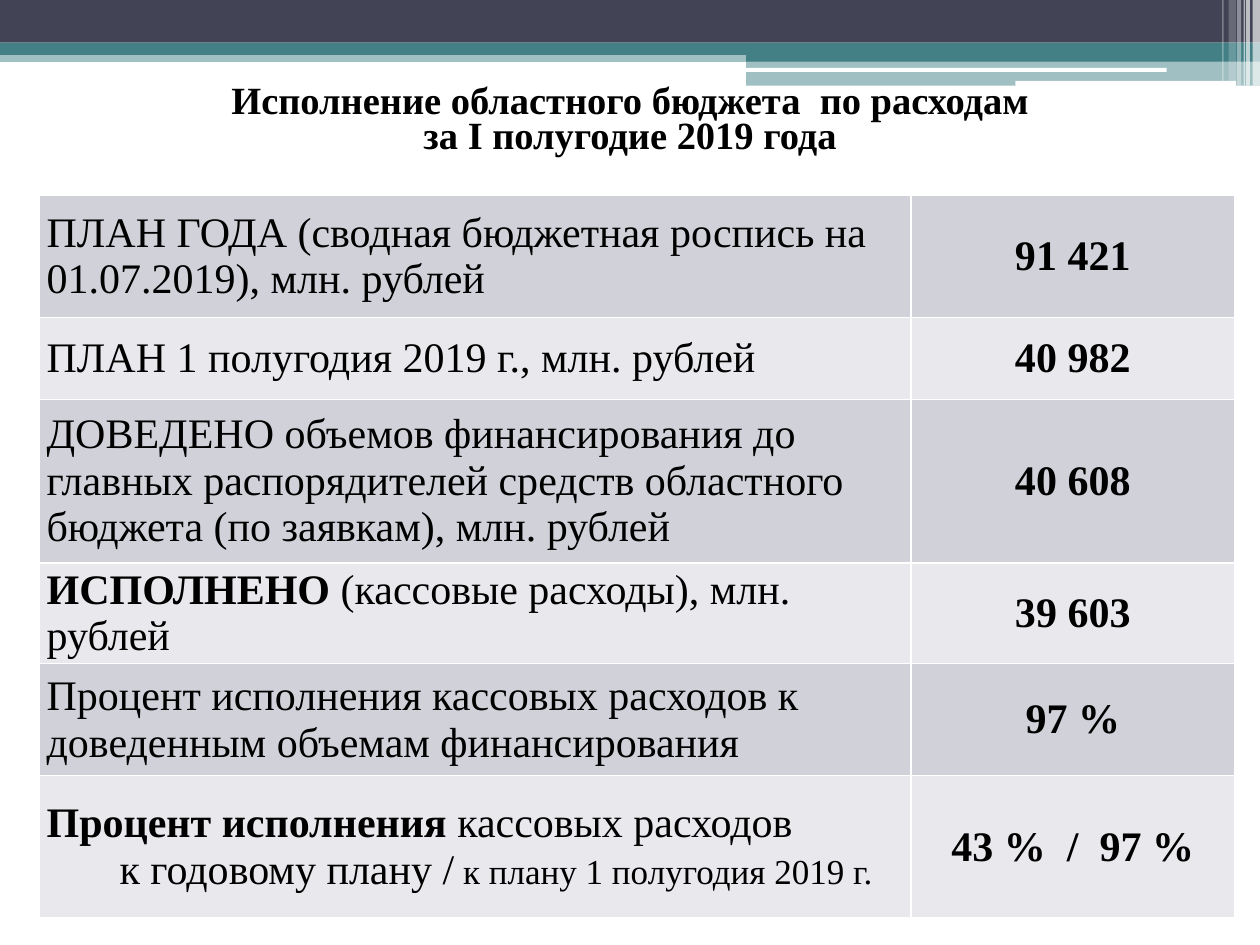
from lxml.etree import SubElement
from pptx import Presentation
from pptx.dml.color import RGBColor
from pptx.enum.shapes import MSO_SHAPE
from pptx.enum.text import MSO_ANCHOR, PP_ALIGN
from pptx.oxml.ns import qn
from pptx.util import Cm, Pt

COLORS = {"dark": "424456", "teal": "438086", "white": "FFFFFF",
          "black": "000000", "odd": "D1D1DA", "even": "E9E9ED"}
FONT = "Times New Roman"


def color(name):
    return RGBColor.from_string(COLORS[name])


def style(font, size, bold):
    font.name, font.size, font.bold = FONT, Pt(size), bold
    font.color.rgb = color("black")


prs = Presentation()
prs.slide_width, prs.slide_height = Cm(25.4), Cm(19.05)
slide = prs.slides.add_slide(prs.slide_layouts[5])
shapes = slide.shapes

# Header bands: left, top, width, height, color, opacity in percent, rounded
bands = [
    (0, 1.02, 25.4, 0.23, "teal", 50, False),
    (0, 0, 25.4, 0.86, "dark", 100, False),
    (0, 0.86, 25.4, 0.25, "teal", 100, False),
    (15.04, 0.99, 10.36, 0.25, "teal", 100, False),
    (15.04, 1.22, 10.36, 0.51, "teal", 50, False),
    (15.01, 1.37, 8.51, 0.08, "white", 100, True),
    (20.47, 1.63, 4.45, 0.1, "white", 100, True),
]
# Thin stripes at the right edge: left, width, height, opacity
stripes = [(25.25, 0.15, 1.73, 65), (25.12, 0.08, 1.73, 65),
           (25.07, 0.03, 1.73, 60), (24.94, 0.08, 1.73, 40),
           (24.77, 0.15, 1.63, 20), (24.64, 0.03, 1.63, 30)]
bands += [(left, 0, width, height, "white", alpha, False)
          for left, width, height, alpha in stripes]

for left, top, width, height, name, alpha, rounded in bands:
    kind = MSO_SHAPE.ROUNDED_RECTANGLE if rounded else MSO_SHAPE.RECTANGLE
    band = shapes.add_shape(kind, Cm(left), Cm(top), Cm(width), Cm(height))
    band.shadow.inherit = False
    band.line.fill.background()
    band.fill.solid()
    band.fill.fore_color.rgb = color(name)
    if alpha < 100:
        fill = band.fill._xPr.find(qn("a:solidFill"))
        SubElement(fill[0], qn("a:alpha"), val=str(alpha * 1000))

# Title, in front of the bands
title = shapes.title
shapes._spTree.append(title._element)
title.left, title.top = Cm(0), Cm(1.52)
title.width, title.height = Cm(25.4), Cm(1.73)
frame = title.text_frame
frame.word_wrap = True
frame.vertical_anchor = MSO_ANCHOR.BOTTOM
frame.margin_left = frame.margin_right = Cm(0.15)
frame.margin_top, frame.margin_bottom = Cm(0), Cm(0.1)
frame.text = "Исполнение областного бюджета  по расходам\nза I полугодие 2019 года"
for par in frame.paragraphs:
    par.alignment = PP_ALIGN.CENTER
    par.line_spacing = 0.75
    par.space_before = Pt(0)
    style(par.font, 22, True)

# Budget table: row height, label runs (text, size, bold), value
rows = [
    (2.46, [("ПЛАН ГОДА (сводная бюджетная роспись на 01.07.2019), млн. рублей",
             24, False)], "91 421"),
    (1.65, [("ПЛАН 1 полугодия 2019 г., млн. рублей", 24, False)], "40 982"),
    (3.3, [("ДОВЕДЕНО объемов финансирования до главных распорядителей "
            "средств областного бюджета (по заявкам), млн. рублей",
            24, False)], "40 608"),
    (2.03, [("ИСПОЛНЕНО ", 24, True),
            ("(кассовые расходы), млн. рублей", 24, False)], "39 603"),
    (2.26, [("Процент исполнения кассовых расходов к доведенным объемам "
             "финансирования", 24, False)], "97 %"),
    (2.87, [("Процент исполнения ", 24, True),
            ("кассовых расходов\vк годовому плану /", 24, False),
            (" к плану 1 полугодия 2019 г.", 20, False)], "43 %  /  97 %"),
]
total = sum(row[0] for row in rows)
table = shapes.add_table(len(rows), 2, Cm(0.79), Cm(3.94),
                         Cm(24.1), Cm(total)).table
table.first_row = table.horz_banding = False
table.columns[0].width, table.columns[1].width = Cm(17.57), Cm(6.53)

for i, (height, label, value) in enumerate(rows):
    table.rows[i].height = Cm(height)
    for j, runs in enumerate([label, [(value, 24, True)]]):
        cell = table.cell(i, j)
        cell.fill.solid()
        cell.fill.fore_color.rgb = color("even" if i % 2 else "odd")
        cell.vertical_anchor = MSO_ANCHOR.MIDDLE
        cell.margin_left = cell.margin_right = Cm(0.15)
        cell.margin_top = cell.margin_bottom = Cm(0)
        par = cell.text_frame.paragraphs[0]
        par.alignment = PP_ALIGN.CENTER if j else PP_ALIGN.LEFT
        for text, size, bold in runs:
            for n, part in enumerate(text.split("\v")):
                if n:
                    par.add_line_break()
                run = par.add_run()
                run.text = part
                style(run.font, size, bold)

# The second line of the last label hangs to the right
props = table.cell(len(rows) - 1, 0).text_frame.paragraphs[0]._p.get_or_add_pPr()
props.set("marL", str(Cm(1.47)))
props.set("indent", str(-Cm(1.47)))

prs.save("out.pptx")
